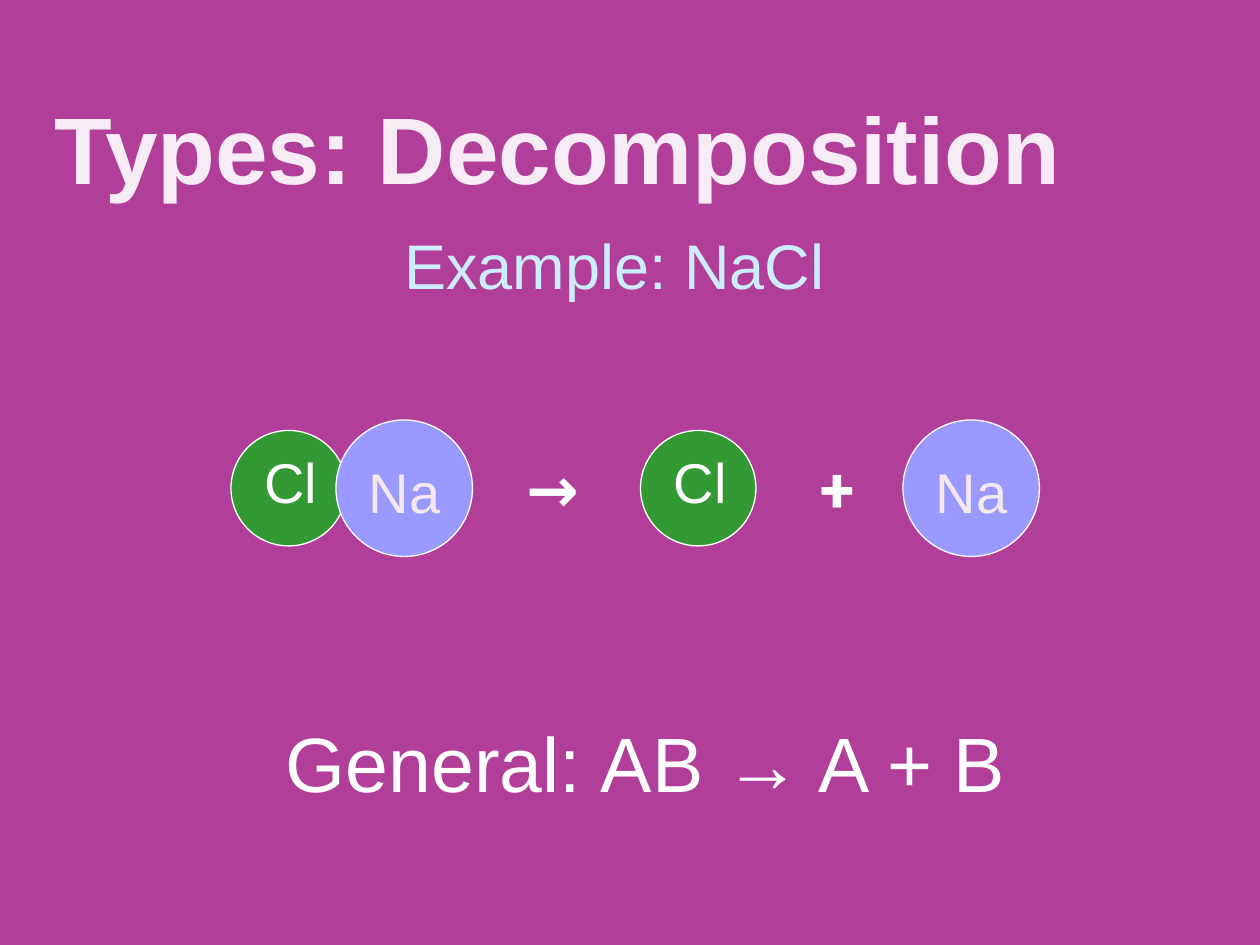
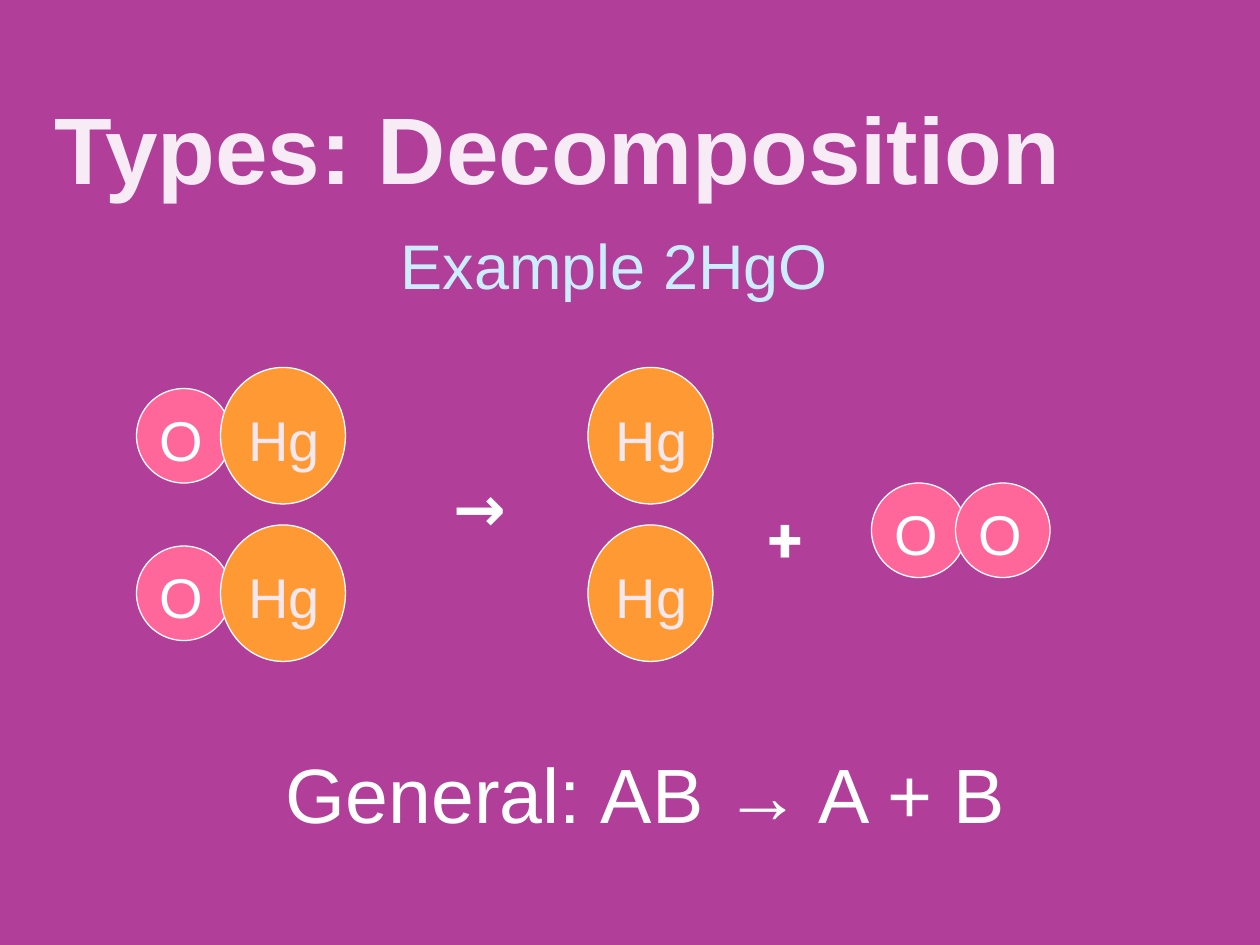
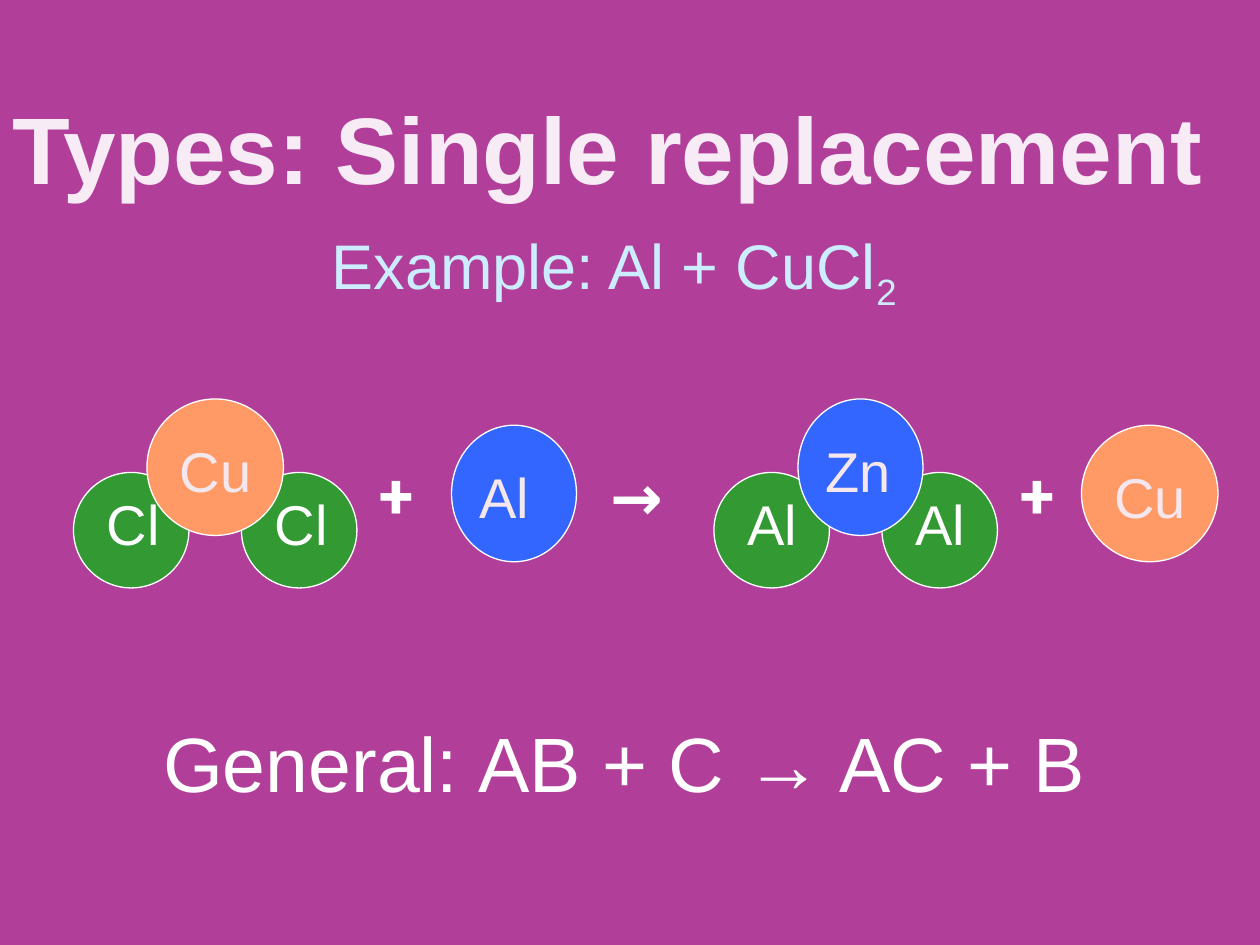
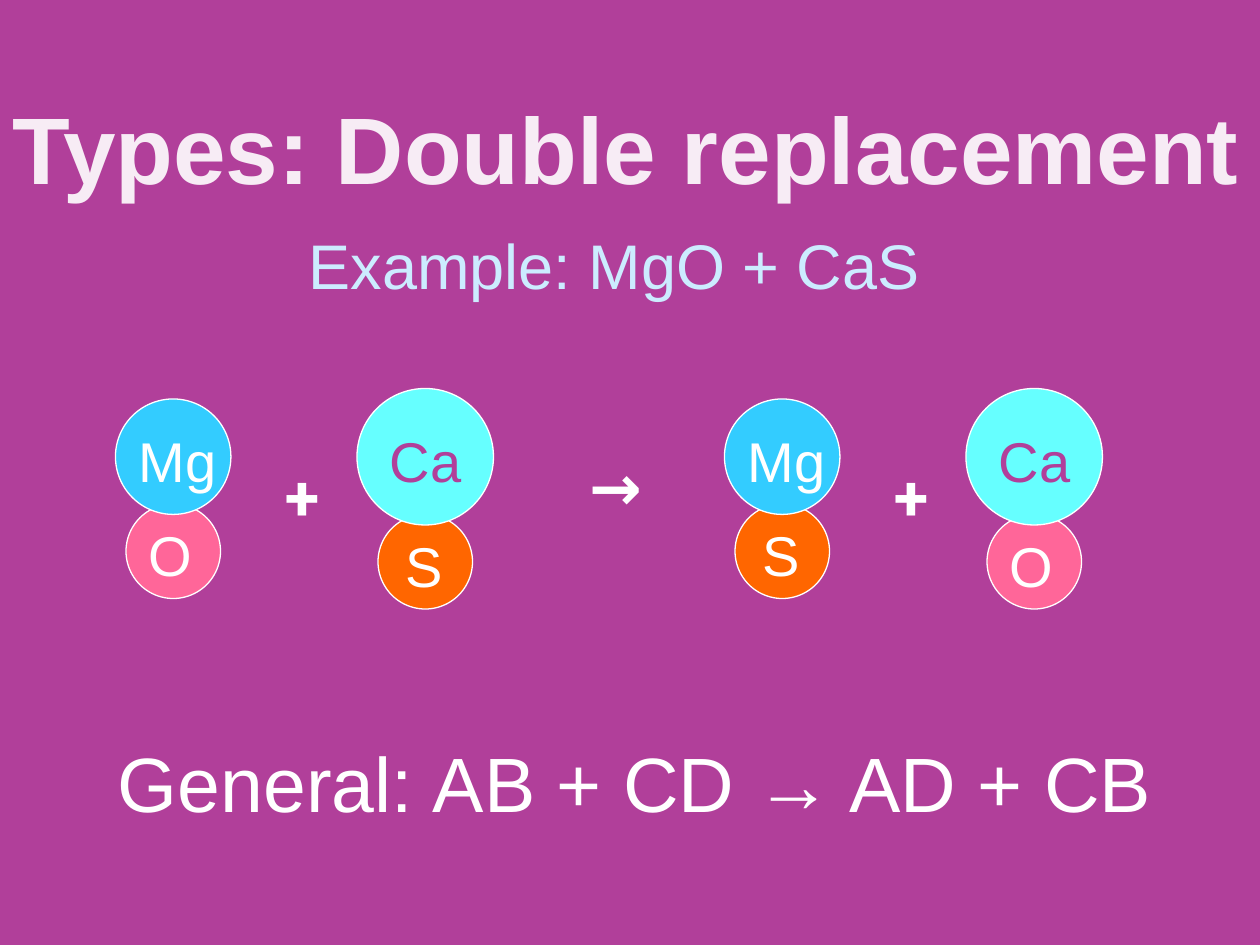
from dataclasses import dataclass

from lxml.etree import SubElement
from pptx import Presentation
from pptx.dml.color import RGBColor
from pptx.enum.shapes import MSO_SHAPE
from pptx.enum.text import MSO_ANCHOR, MSO_AUTO_SIZE, PP_ALIGN
from pptx.oxml.ns import qn
from pptx.util import Cm, Pt


@dataclass(frozen=True)
class Theme:
    background: str = "B13F9A"
    white: str = "FFFFFF"
    pale: str = "F4E7ED"
    ice: str = "CCECFF"
    body_font: str = "Arial"
    sign_font: str = "Roboto Slab"
    title_size: int = 54
    general_size: int = 44
    example_size: int = 36
    sign_size: int = 36
    atom_size: int = 32
    title_opacity: int = 90


@dataclass(frozen=True)
class Box:
    left: int
    top: int
    width: int
    height: int

    def inner(self, dx, dy, width, height):
        return Box(self.left + dx, self.top + dy, width, height)

    @property
    def place(self):
        return self.left, self.top, self.width, self.height


@dataclass(frozen=True)
class Atom:
    fill: str
    width: float
    height: float
    label_dx: float
    label_dy: float
    label_width: float
    inset: float = 0  # extra left margin of the symbol, in cm
    color: str = Theme.white


THEME = Theme()
LABEL_HEIGHT = 7.5


def grid(steps):
    """Length of a number of drawing-grid steps, twelve to the inch."""
    return Cm(steps * 2.54 / 12)


def grid_box(left, top, width, height):
    return Box(*map(grid, (left, top, width, height)))


# Atom styles, measured in grid steps
def large_atom(fill, color=THEME.pale):
    return Atom(fill, 13, 13, 0, 3, 13, 0.41, color)


def oval_atom(fill):
    return Atom(fill, 11.9, 13, 0, 3, 11, 0.31, THEME.pale)


ATOMS = {
    "Cl": Atom("339933", 11, 11, 2, 1, 10),
    "O": Atom("FF6699", 9, 9, 1, 1, 10),
    "S": Atom("FF6600", 9, 9, 1, 1, 7, 0.1),
    "Mg": Atom("33CCFF", 11, 11, 1, 2, 10),
    "Na": large_atom("9999FF"),
    "Cu": large_atom("FF9966"),
    "Ca": large_atom("66FFFF", THEME.background),
    "Hg": oval_atom("FF9933"),
    "Al": oval_atom("3366FF"),
}


# Molecules: atom style, symbol shown, offset in grid steps, back to front
def single(symbol):
    return [(symbol, symbol, 0, 0)]


def stacked(lower, upper, dx, dy):
    return [(lower, lower, dx, dy), (upper, upper, 0, 0)]


def triangle(center, center_symbol, side_symbol, dx):
    return [("Cl", side_symbol, 16, 7), ("Cl", side_symbol, 0, 7),
            (center, center_symbol, dx, 0)]


NACL = [("Cl", "Cl", 0, 1), ("Na", "Na", 10, 0)]
HGO = [("O", "O", 0, 2), ("Hg", "Hg", 8, 0)]
O2 = [("O", "O", 0, 0), ("O", "O", 8, 0)]
CUCL2 = triangle("Cu", "Cu", "Cl", 7)
ZNAL2 = triangle("Al", "Zn", "Al", 8)

NARROW_TITLE = grid_box(4, 5, 111, 15)
WIDE_TITLE = grid_box(0, 5, 120, 15)
EXAMPLE = grid_box(10, 21, 97, 9)
DIAGRAM = grid_box(0, 35, 120, 30)


def write(slide, box, runs, size, color, font=THEME.body_font, bold=False,
          align=PP_ALIGN.LEFT, anchor=MSO_ANCHOR.TOP, **frame_format):
    """Add a text box; runs is a list of (text, subscript)."""
    frame = slide.shapes.add_textbox(*box.place).text_frame
    settings = {"word_wrap": True, "vertical_anchor": anchor, **frame_format}
    for name, value in settings.items():
        setattr(frame, name, value)
    paragraph = frame.paragraphs[0]
    paragraph.alignment = align
    for text, subscript in runs:
        run = paragraph.add_run()
        run.text = text
        for name, value in {"name": font, "size": Pt(size), "bold": bold}.items():
            setattr(run.font, name, value)
        run.font.color.rgb = RGBColor.from_string(color)
        if subscript:
            run.font._element.set("baseline", "-25000")
    return paragraph


def add_title(slide, box, text):
    paragraph = write(slide, box, [(text, False)], THEME.title_size, THEME.white,
                      bold=True, anchor=MSO_ANCHOR.BOTTOM)
    color = paragraph.runs[0].font._element.find(".//" + qn("a:srgbClr"))
    SubElement(color, qn("a:alpha"), val=str(THEME.title_opacity * 1000))


def add_example(slide, box, runs):
    write(slide, box, runs, THEME.example_size, THEME.ice, align=PP_ALIGN.CENTER)


def add_general(slide, box, equation):
    write(slide, box, [("General:\t" + equation, False)], THEME.general_size,
          THEME.white, align=PP_ALIGN.CENTER, anchor=MSO_ANCHOR.MIDDLE)


def add_sign(slide, box, sign):
    write(slide, box, [(sign, False)], THEME.sign_size, THEME.white,
          THEME.sign_font, True, auto_size=MSO_AUTO_SIZE.SHAPE_TO_FIT_TEXT)


def add_atom(slide, box, atom, symbol):
    ball = slide.shapes.add_shape(MSO_SHAPE.OVAL, *box.place)
    ball.shadow.inherit = False
    ball.fill.solid()
    ball.fill.fore_color.rgb = RGBColor.from_string(atom.fill)
    ball.line.color.rgb = RGBColor.from_string(THEME.white)
    ball.line.width = Pt(0.75)
    label = box.inner(*map(grid, (atom.label_dx, atom.label_dy,
                                  atom.label_width, LABEL_HEIGHT)))
    write(slide, label, [(symbol, False)], THEME.atom_size, atom.color,
          margin_left=Cm(0.25 + atom.inset), margin_right=0,
          auto_size=MSO_AUTO_SIZE.SHAPE_TO_FIT_TEXT)


def add_diagram(slide, box, molecules, signs):
    """Draw molecules and signs at grid offsets inside the box."""
    for parts, left, top in molecules:
        for kind, symbol, dx, dy in parts:
            atom = ATOMS[kind]
            place = box.inner(*map(grid, (left + dx, top + dy, atom.width, atom.height)))
            add_atom(slide, place, atom, symbol)
    for sign, left, top in signs:
        width = 9 if sign == "→" else 6
        add_sign(slide, box.inner(*map(grid, (left, top, width, 8.4))), sign)


REACTIONS = [
    dict(title="Types: Decomposition", title_box=NARROW_TITLE,
         example=[("Example: NaCl", False)],
         molecules=[(NACL, 22, 5), (single("Cl"), 61, 6), (single("Na"), 86, 5)],
         signs=[("→", 49, 7.2), ("+", 77, 7.2)],
         general="AB → A + B", general_box=grid_box(6, 65, 111, 15)),
    dict(title="Types: Decomposition", title_box=NARROW_TITLE,
         example=[("Example 2HgO", False)],
         molecules=[(parts, left, top) for parts, left in ((HGO, 13), (single("Hg"), 56))
                    for top in (0, 15)] + [(O2, 83, 11)],
         signs=[("→", 42, 9), ("+", 72, 12)],
         general="AB → A + B", general_box=grid_box(6, 68, 111, 15)),
    dict(title="Types: Single replacement", title_box=WIDE_TITLE,
         example=[("Example: Al + CuCl", False), ("2", True)],
         molecules=[(CUCL2, 7, 3), (single("Al"), 43, 5.5),
                    (ZNAL2, 68, 3), (single("Cu"), 103, 5.5)],
         signs=[("+", 35, 7.8), ("→", 57, 8), ("+", 96, 7.8)],
         general="AB + C → AC + B", general_box=grid_box(4, 65, 111, 15)),
    dict(title="Types: Double replacement", title_box=WIDE_TITLE,
         example=[("Example: MgO + CaS", False)],
         molecules=[(stacked("O", "Mg", 1, 10), 11, 3), (stacked("S", "Ca", 2, 12), 34, 2),
                    (stacked("S", "Mg", 1, 10), 69, 3), (stacked("O", "Ca", 2, 12), 92, 2)],
         signs=[("+", 26, 8), ("→", 55, 7), ("+", 84, 8)],
         general="AB + CD → AD + CB", general_box=grid_box(5, 69, 111, 11)),
]


def add_reaction_slide(deck, reaction):
    slide = deck.slides.add_slide(deck.slide_layouts[6])
    slide.background.fill.solid()
    slide.background.fill.fore_color.rgb = RGBColor.from_string(THEME.background)
    add_title(slide, reaction["title_box"], reaction["title"])
    add_example(slide, EXAMPLE, reaction["example"])
    add_diagram(slide, DIAGRAM, reaction["molecules"], reaction["signs"])
    add_general(slide, reaction["general_box"], reaction["general"])


def main():
    deck = Presentation()
    deck.slide_width, deck.slide_height = Cm(25.4), Cm(19.05)
    for reaction in REACTIONS:
        add_reaction_slide(deck, reaction)
    deck.save("out.pptx")


if __name__ == "__main__":
    main()
